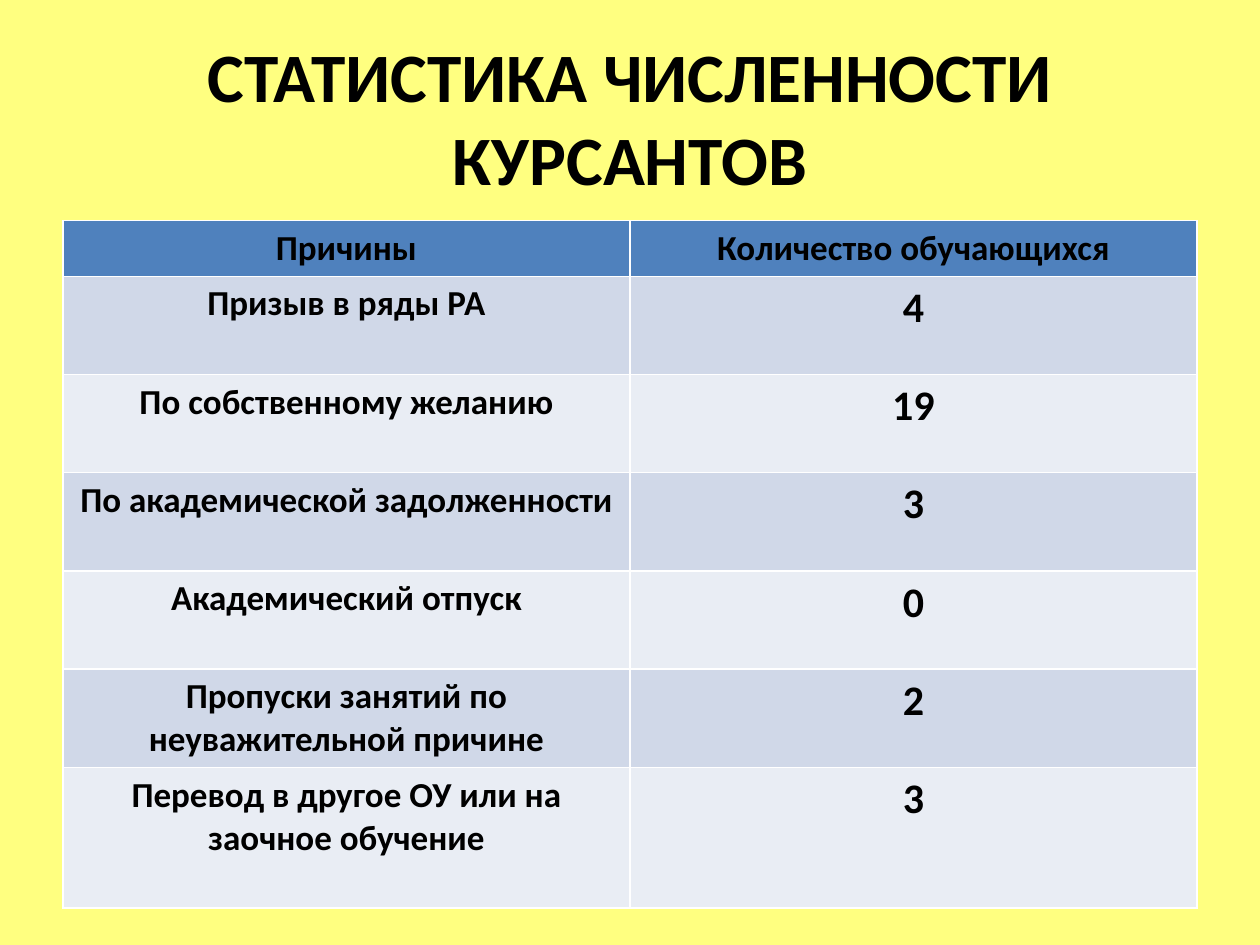
from dataclasses import dataclass

from pptx import Presentation
from pptx.dml.color import RGBColor
from pptx.enum.text import MSO_ANCHOR, PP_ALIGN
from pptx.util import Cm, Pt


@dataclass(frozen=True)
class Theme:
    font: str = "Calibri"
    background: str = "FFFF80"
    text: str = "000000"
    header: str = "4F81BD"
    bands: tuple = ("D0D8E8", "E9EDF4")
    title_size: float = 39.6
    label_size: float = 20
    count_size: float = 24


HEADINGS = ("Причины", "Количество обучающихся")
REASONS = (
    ("Призыв в ряды РА", 4),
    ("По собственному желанию", 19),
    ("По академической задолженности", 3),
    ("Академический отпуск", 0),
    ("Пропуски занятий по неуважительной причине", 2),
    ("Перевод в другое ОУ или на заочное обучение", 3),
)

# Layout in centimetres
MARGIN = 1.27
CONTENT_WIDTH = 22.86
HEADER_HEIGHT = 1.11
ROW_HEIGHT = 1.98
LAST_ROW_HEIGHT = 2.83


class SlideBuilder:
    def __init__(self, slide, theme):
        self.slide = slide
        self.theme = theme

    def fill(self, target, color):
        target.fill.solid()
        target.fill.fore_color.rgb = RGBColor.from_string(color)

    def set_text(self, text_frame, text, size):
        text_frame.text = text
        paragraph = text_frame.paragraphs[0]
        paragraph.alignment = PP_ALIGN.CENTER
        font = paragraph.font
        font.name = self.theme.font
        font.size = Pt(size)
        font.bold = True
        font.color.rgb = RGBColor.from_string(self.theme.text)

    def background(self):
        self.fill(self.slide.background, self.theme.background)

    def title(self, text, top, height):
        shape = self.slide.shapes.title
        shape.left, shape.top = Cm(MARGIN), Cm(top)
        shape.width, shape.height = Cm(CONTENT_WIDTH), Cm(height)
        shape.text_frame.vertical_anchor = MSO_ANCHOR.MIDDLE
        self.set_text(shape.text_frame, text, self.theme.title_size)

    def cell(self, cell, text, size, color):
        self.fill(cell, color)
        self.set_text(cell.text_frame, text, size)

    def table(self, headings, records, top, heights):
        theme = self.theme
        table = self.slide.shapes.add_table(
            len(heights), len(headings), Cm(MARGIN), Cm(top),
            Cm(CONTENT_WIDTH), Cm(sum(heights))).table
        for row, height in zip(table.rows, heights):
            row.height = Cm(height)

        # Header row
        for column, heading in enumerate(headings):
            self.cell(table.cell(0, column), heading, theme.label_size, theme.header)

        # Banded rows: reason and count
        for index, (reason, count) in enumerate(records):
            color = theme.bands[index % len(theme.bands)]
            self.cell(table.cell(index + 1, 0), reason, theme.label_size, color)
            self.cell(table.cell(index + 1, 1), str(count), theme.count_size, color)


def main():
    presentation = Presentation()
    presentation.slide_width, presentation.slide_height = Cm(25.4), Cm(19.05)
    slide = presentation.slides.add_slide(
        presentation.slide_layouts.get_by_name("Title Only"))

    builder = SlideBuilder(slide, Theme())
    builder.background()
    builder.title("СТАТИСТИКА ЧИСЛЕННОСТИ КУРСАНТОВ", top=0.76, height=3.18)
    heights = [HEADER_HEIGHT, *[ROW_HEIGHT] * (len(REASONS) - 1), LAST_ROW_HEIGHT]
    builder.table(HEADINGS, REASONS, top=4.45, heights=heights)

    presentation.save("out.pptx")


if __name__ == "__main__":
    main()
